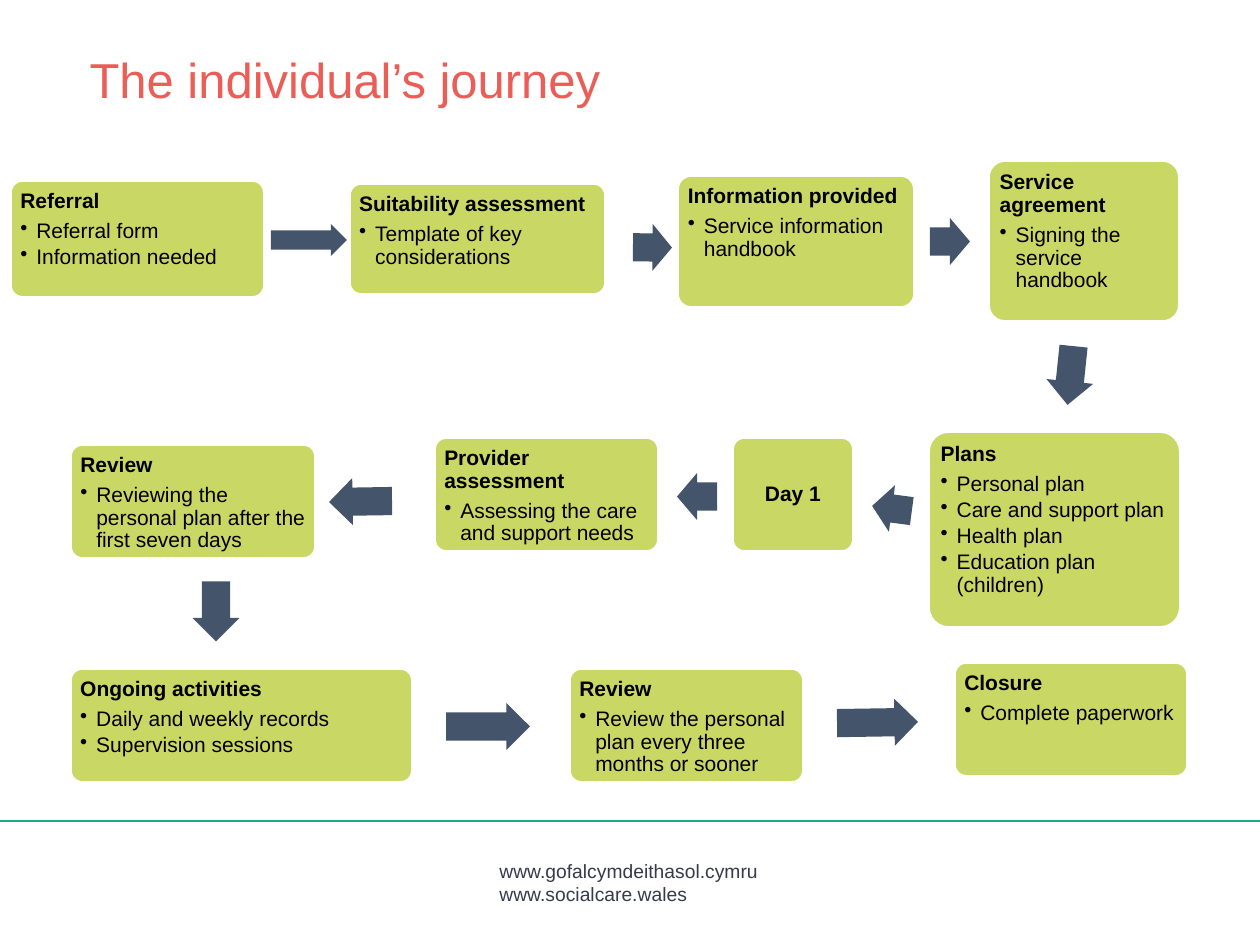
from lxml.etree import SubElement
from pptx import Presentation
from pptx.dml.color import RGBColor
from pptx.enum.shapes import MSO_CONNECTOR, MSO_SHAPE as Shape
from pptx.enum.text import MSO_ANCHOR as Anchor, PP_ALIGN as Align
from pptx.oxml.ns import qn
from pptx.util import Pt

PX = 914400 / 126
FONT = "Arial"
CORAL = RGBColor(0xEB, 0x5E, 0x57)
LIME = RGBColor(0xC9, 0xD7, 0x65)
NAVY = RGBColor(0x44, 0x54, 0x6A)
TEAL = RGBColor(0x16, 0xAD, 0x85)
SLATE = RGBColor(0x37, 0x39, 0x4C)
BLACK = RGBColor(0, 0, 0)
WHITE = RGBColor(255, 255, 255)

TITLE = "The individual’s journey"
WEBSITES = "www.gofalcymdeithasol.cymru\nwww.socialcare.wales"

# Each step: (left, top, width, height) in px, heading, bullet points
STEPS = [
    ((11, 181, 253, 116), "Referral", ["Referral form", "Information needed"]),
    ((350, 184, 255, 110), "Suitability assessment", ["Template of key considerations"]),
    ((678, 176, 236, 131), "Information provided", ["Service information handbook"]),
    ((989, 161, 190, 160), "Service agreement", ["Signing the service handbook"]),
    ((929, 432, 251, 195), "Plans", ["Personal plan", "Care and support plan",
                                     "Health plan", "Education plan (children)"]),
    ((733, 438, 120, 113), "Day 1", []),
    ((435, 438, 223, 113), "Provider assessment", ["Assessing the care and support needs"]),
    ((71, 445, 244, 113), "Review", ["Reviewing the personal plan after the first seven days"]),
    ((71, 669, 341, 113), "Ongoing activities", ["Daily and weekly records",
                                                 "Supervision sessions"]),
    ((570, 669, 233, 113), "Review", ["Review the personal plan every three months or sooner"]),
    ((955, 663, 232, 113), "Closure", ["Complete paperwork"]),
]

# Arrows from each step to the next: box in px before turning, degrees clockwise
ARROWS = [
    ((271, 224, 76, 32), 0),
    ((633, 224, 39, 47), 0.5),
    ((930, 218, 40, 47), 0),
    ((1041, 352, 59, 47), 95.9),
    ((872, 485, 40, 47), 187.5),
    ((677, 473, 40, 47), 180),
    ((329, 478, 63, 47), 179.1),
    ((186, 588, 60, 47), 90),
    ((446, 703, 84, 47), 0),
    ((837, 699, 81, 47), 359.1),
]


def emu(*lengths):
    return [round(length * PX) for length in lengths]


def set_insets(frame, inset):
    frame.margin_left = frame.margin_right = inset
    frame.margin_top = frame.margin_bottom = inset


def style(paragraph, size, color, bold=False):
    font = paragraph.font
    font.name, font.size, font.bold = FONT, Pt(size), bold
    font.color.rgb = color


def add_bullet(paragraph):
    properties = paragraph._p.get_or_add_pPr()
    indent, = emu(16)
    properties.set("marL", str(indent))
    properties.set("indent", str(-indent))
    SubElement(properties, qn("a:buChar")).set("char", "•")


def add_block(slide, preset, box, fill):
    block = slide.shapes.add_shape(preset, *emu(*box))
    block.shadow.inherit = False
    block.fill.solid()
    block.fill.fore_color.rgb = fill
    return block


def add_step(slide, box, heading, points):
    card = add_block(slide, Shape.ROUNDED_RECTANGLE, box, LIME)
    card.adjustments[0] = 0.1
    card.line.color.rgb = WHITE
    card.line.width = Pt(1)
    frame = card.text_frame
    frame.word_wrap = True
    set_insets(frame, emu(6)[0])
    frame.vertical_anchor = Anchor.TOP if points else Anchor.MIDDLE
    frame.text = "\n".join([heading, *points])
    for i, paragraph in enumerate(frame.paragraphs):
        is_heading = i == 0
        paragraph.alignment = Align.LEFT if points else Align.CENTER
        paragraph.line_spacing = 0.9
        paragraph.space_after = Pt(4.2 if is_heading else 1.8)
        if not is_heading:
            add_bullet(paragraph)
        style(paragraph, 12, BLACK, bold=is_heading)


def add_arrow(slide, box, turn):
    arrow = add_block(slide, Shape.RIGHT_ARROW, box, NAVY)
    arrow.adjustments[0], arrow.adjustments[1] = 0.6, 0.5
    arrow.line.fill.background()
    arrow.rotation = turn


def add_title(slide):
    title = slide.shapes.title
    title.left, title.top, title.width, title.height = emu(77, 50, 1101, 142)
    frame = title.text_frame
    frame.text = TITLE
    frame.vertical_anchor = Anchor.TOP
    heading = frame.paragraphs[0]
    heading.alignment = Align.LEFT
    heading.line_spacing = 0.9
    style(heading, 28, CORAL)


def add_footer(slide):
    rule = slide.shapes.add_connector(MSO_CONNECTOR.STRAIGHT, *emu(0, 821, 1260, 821))
    rule.line.color.rgb = TEAL
    rule.line.width = Pt(1)
    SubElement(rule._element.spPr, qn("a:effectLst"))
    frame = slide.shapes.add_textbox(*emu(487, 853, 285, 58)).text_frame
    frame.word_wrap = True
    frame.margin_right = 0
    frame.text = WEBSITES
    for paragraph in frame.paragraphs:
        style(paragraph, 11, SLATE)


def main():
    deck = Presentation()
    deck.slide_width, deck.slide_height = emu(1260, 945)
    slide = deck.slides.add_slide(deck.slide_layouts[5])
    add_footer(slide)
    add_title(slide)
    for step in STEPS:
        add_step(slide, *step)
    for arrow in ARROWS:
        add_arrow(slide, *arrow)
    deck.save("out.pptx")


if __name__ == "__main__":
    main()
